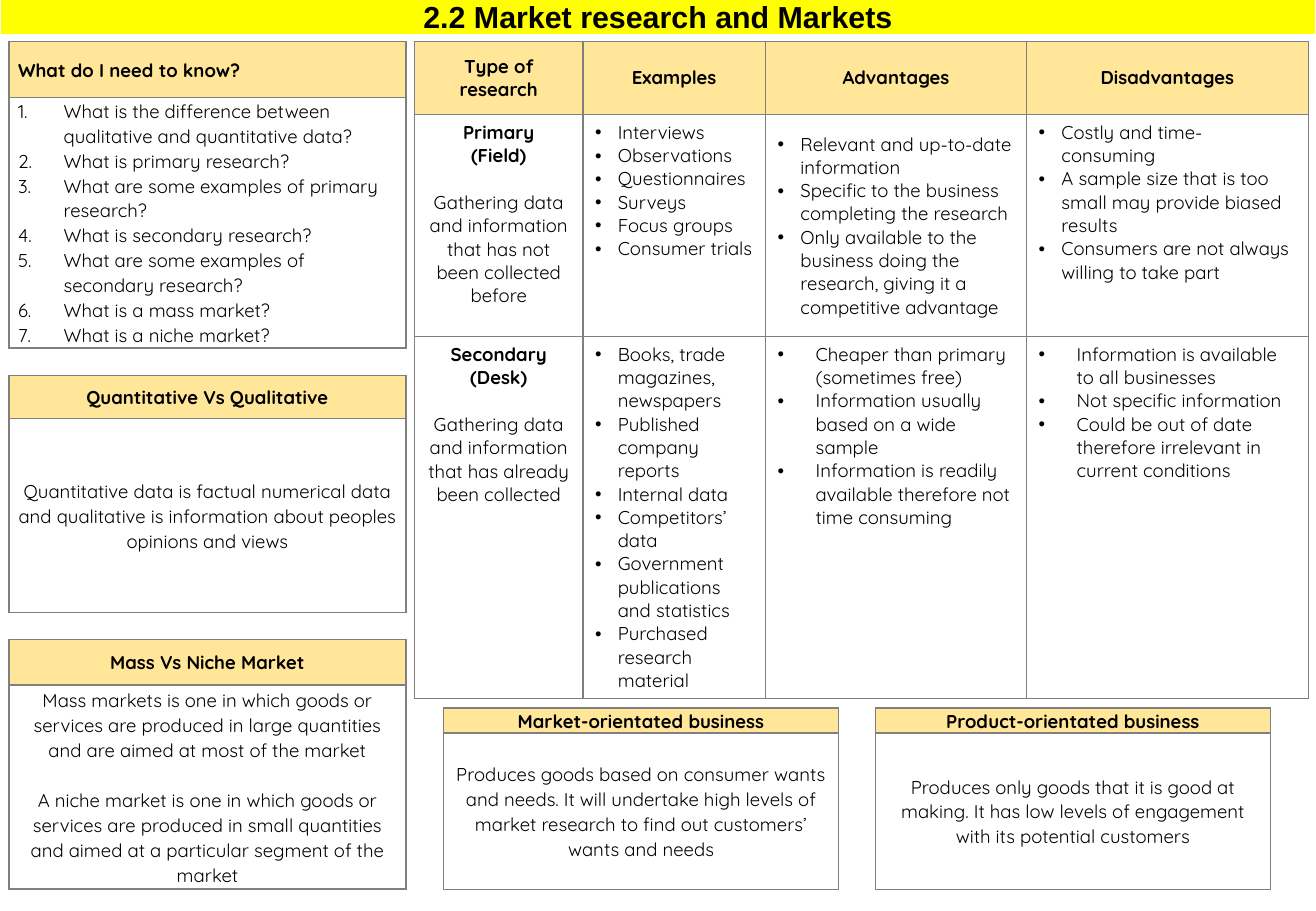
"""Builds the one-page revision sheet on market research and markets."""
from lxml.etree import SubElement
from pptx import Presentation
from pptx.dml.color import RGBColor
from pptx.enum.text import MSO_ANCHOR as Anchor, PP_ALIGN as Align
from pptx.oxml.ns import qn
from pptx.util import Pt

COLOURS = {"title": "FFFF00", "header": "FFE699", "border": "808080",
           "title_border": "FFFFFF", "text": "000000"}
FONT = "Quicksand"
SIZE = 11
WIDE = 1.07
SIDE_LEFT, SIDE_WIDTH = 5.3, 235.4
BASE_TOP, BASE_WIDTH = 419.6, 234
BLANK_LINE = 14

QUESTIONS = [
    "What is the difference between qualitative and quantitative data?",
    "What is primary research?",
    "What are some examples of primary research?",
    "What is secondary research?",
    "What are some examples of secondary research?",
    "What is a mass market?",
    "What is a niche market?",
]
DATA_KINDS = ["Quantitative data is factual numerical data and qualitative is "
              "information about peoples opinions and views"]
MARKETS = [
    "Mass markets is one in which goods or services are produced in large "
    "quantities and are aimed at most of the market",
    "A niche market is one in which goods or services are produced in small "
    "quantities and aimed at a particular segment of the market",
]
MARKET_LED = ["Produces goods based on consumer wants and needs. It will undertake high "
              "levels of market research to find out customers’ wants and needs"]
PRODUCT_LED = ["Produces only goods that it is good at making. It has low levels of "
               "engagement with its potential customers"]
HEADINGS = ["Type of research", "Examples", "Advantages", "Disadvantages"]
PRIMARY = [
    ["Primary", "(Field)",
     "Gathering data and information that has not been collected before"],
    ["Interviews", "Observations", "Questionnaires", "Surveys", "Focus groups",
     "Consumer trials"],
    ["Relevant and up-to-date information",
     "Specific to the business completing the research",
     "Only available to the business doing the research, giving it a competitive advantage"],
    ["Costly and time-consuming",
     "A sample size that is too small may provide biased results",
     "Consumers are not always willing to take part"],
]
SECONDARY = [
    ["Secondary", "(Desk)",
     "Gathering data and information that has already been collected"],
    ["Books, trade magazines, newspapers", "Published company reports", "Internal data",
     "Competitors’ data", "Government publications and statistics",
     "Purchased research material"],
    ["Cheaper than primary (sometimes free)",
     "Information usually based on a wide sample",
     "Information is readily available therefore not time consuming"],
    ["Information is available to all businesses", "Not specific information",
     "Could be out of date therefore irrelevant in current conditions"],
]


def style_font(font, name, size, bold):
    """Set face, size, weight and colour of a font."""
    font.name, font.size, font.bold = name, Pt(size), bold
    font.color.rgb = RGBColor.from_string(COLOURS["text"])


def add_marker(paragraph, indent, numbered):
    """Give a paragraph a hanging bullet or number."""
    props = paragraph._p.get_or_add_pPr()
    props.set("marL", str(Pt(indent)))
    props.set("indent", str(-Pt(indent)))
    if numbered:
        SubElement(props, qn("a:buFont"), typeface="+mj-lt")
        SubElement(props, qn("a:buAutoNum"), type="arabicPeriod")
    else:
        SubElement(props, qn("a:buFont"), typeface="Arial")
        SubElement(props, qn("a:buChar"), char="•")


def write(cell, lines, bold_lines=0, gap_before=None, spacing=1.0, indent=0,
          numbered=False, align=Align.CENTER, anchor=Anchor.MIDDLE, face=FONT, size=SIZE):
    """Fill a cell with one paragraph per line."""
    cell.vertical_anchor = anchor
    frame = cell.text_frame
    for index, line in enumerate(lines):
        paragraph = frame.add_paragraph() if index else frame.paragraphs[0]
        paragraph.text = line
        if indent:
            add_marker(paragraph, indent, numbered)
        paragraph.alignment = Align.LEFT if indent else align
        paragraph.line_spacing = spacing
        if index == gap_before:
            paragraph.space_before = Pt(BLANK_LINE * spacing)
        style_font(paragraph.font, face, size, index < bold_lines)


def tighten(cell):
    """Give a cell narrow side margins and none above or below."""
    cell.margin_left = cell.margin_right = Pt(5.4)
    cell.margin_top = cell.margin_bottom = 0


def frame_cell(cell, fill, border, bottom_width):
    """Draw the borders of a cell and its fill."""
    props = cell._tc.get_or_add_tcPr()
    for side, width in (("lnL", 1), ("lnR", 1), ("lnT", 1), ("lnB", bottom_width)):
        line = SubElement(props, qn(f"a:{side}"), w=str(Pt(width)))
        paint = SubElement(line, qn("a:solidFill"))
        SubElement(paint, qn("a:srgbClr"), val=COLOURS[border])
    if fill:
        cell.fill.solid()
        cell.fill.fore_color.rgb = RGBColor.from_string(COLOURS[fill])
    else:
        cell.fill.background()


def add_grid(slide, left, top, widths, heights, fill="header", border="border",
             bottom_width=1):
    """Add a bordered table whose first row is filled."""
    grid = slide.shapes.add_table(
        len(heights), len(widths), Pt(left), Pt(top), Pt(sum(widths)), Pt(sum(heights))).table
    grid.first_row = grid.horz_banding = False
    for column, width in zip(grid.columns, widths):
        column.width = Pt(width)
    for index, (row, height) in enumerate(zip(grid.rows, heights)):
        row.height = Pt(height)
        for cell in row.cells:
            frame_cell(cell, None if index else fill, border, bottom_width)
    return grid


def add_title(slide, text):
    """Add the yellow title band across the top."""
    band = add_grid(slide, 0, -0.7, [780], [22], fill="title", border="title_border",
                    bottom_width=3)
    heading = band.cell(0, 0)
    tighten(heading)
    write(heading, [text], bold_lines=1, spacing=WIDE, anchor=Anchor.TOP,
          face="Arial", size=18)


def add_card(slide, left, top, width, heights, heading, lines,
             heading_align=Align.CENTER, **body_style):
    """Add a heading above a body of text."""
    card = add_grid(slide, left, top, [width], heights)
    for cell in card.iter_cells():
        tighten(cell)
    write(card.cell(0, 0), [heading], bold_lines=1, spacing=WIDE, align=heading_align)
    write(card.cell(1, 0), lines, spacing=WIDE, **body_style)


def add_research_table(slide):
    """Add the comparison of primary and secondary research."""
    grid = add_grid(slide, 245.8, 24.5, [99.7, 108.3, 154.7, 167], [43.5, 131.6, 214.4])
    for column, heading in enumerate(HEADINGS):
        write(grid.cell(0, column), [heading], bold_lines=1)
    for row, (kind, *lists) in enumerate((PRIMARY, SECONDARY), start=1):
        write(grid.cell(row, 0), kind, bold_lines=2, gap_before=2, anchor=Anchor.TOP)
        for column, points in enumerate(lists, start=1):
            is_primary = row == 1
            write(grid.cell(row, column), points,
                  indent=13.5 if is_primary or column == 1 else 22.5,
                  anchor=Anchor.MIDDLE if is_primary and column == 2 else Anchor.TOP)


def main():
    """Build and save the slide."""
    deck = Presentation()
    deck.slide_width, deck.slide_height = Pt(780), Pt(540)
    slide = deck.slides.add_slide(deck.slide_layouts[6])
    add_title(slide, "2.2 Market research and Markets")
    add_card(slide, SIDE_LEFT, 24.7, SIDE_WIDTH, [33, 148.6], "What do I need to know?",
             QUESTIONS, heading_align=Align.LEFT, indent=27, numbered=True)
    add_research_table(slide)
    add_card(slide, SIDE_LEFT, 222.5, SIDE_WIDTH, [25.5, 115],
             "Quantitative Vs Qualitative", DATA_KINDS)
    add_card(slide, SIDE_LEFT, 379, SIDE_WIDTH, [27, 121], "Mass Vs Niche Market",
             MARKETS, gap_before=1)
    for left, heading, lines in ((263, "Market-orientated business", MARKET_LED),
                                 (519, "Product-orientated business", PRODUCT_LED)):
        add_card(slide, left, BASE_TOP, BASE_WIDTH, [15, 92.5], heading, lines)
    deck.save("out.pptx")


if __name__ == "__main__":
    main()
